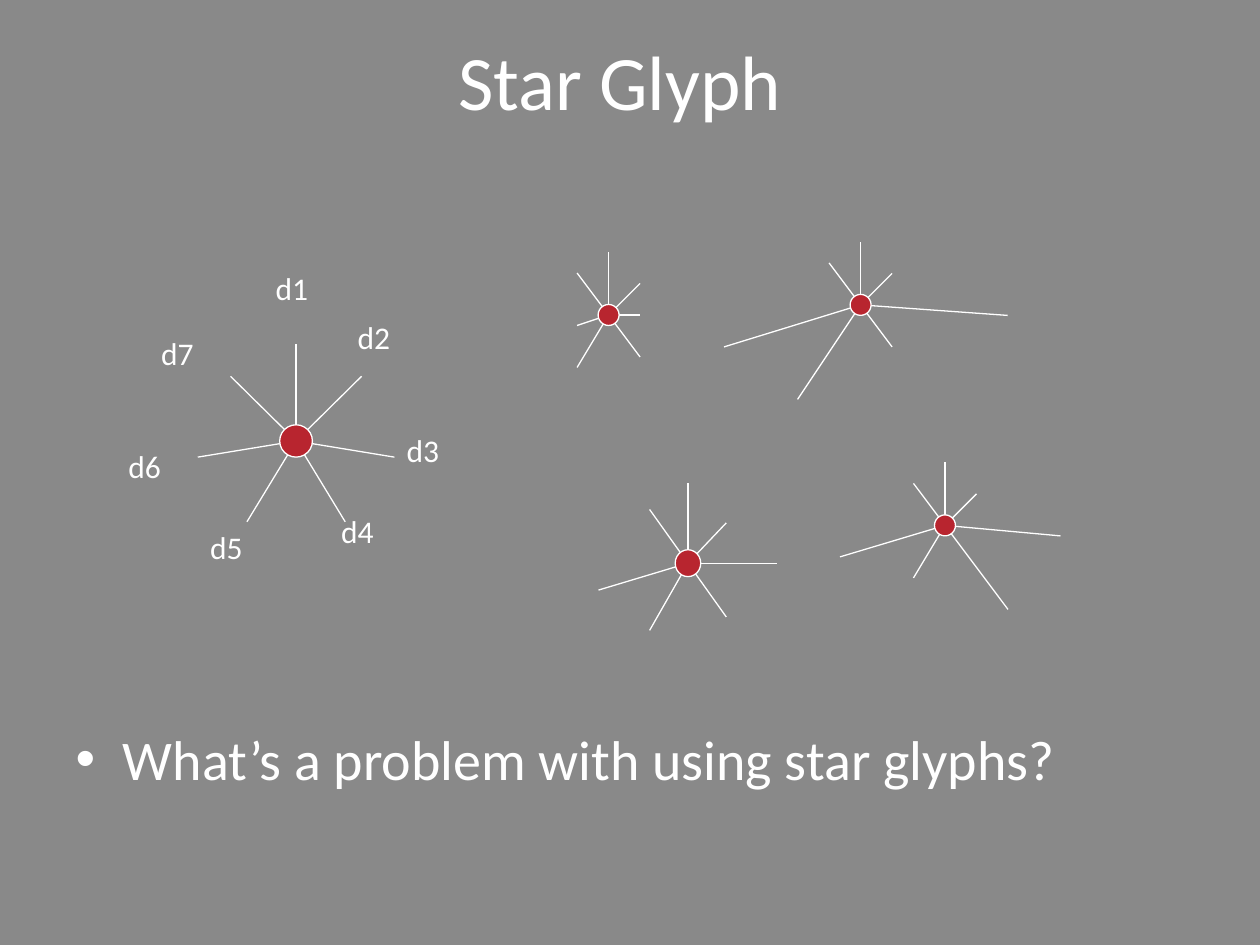
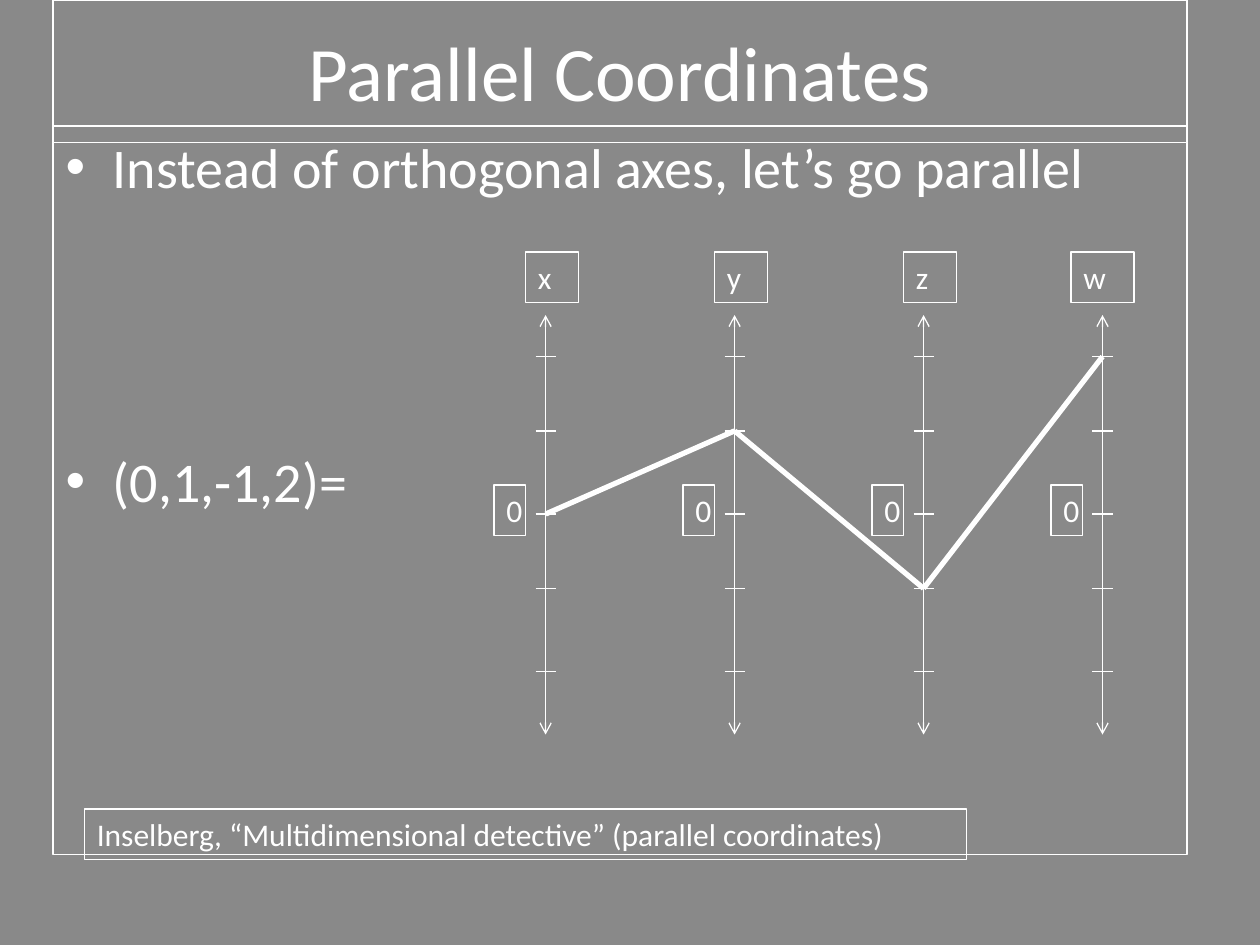
from itertools import pairwise

from lxml.etree import SubElement
from pptx import Presentation
from pptx.dml.color import RGBColor
from pptx.enum.shapes import MSO_CONNECTOR, MSO_SHAPE
from pptx.enum.text import MSO_ANCHOR, MSO_AUTO_SIZE, PP_ALIGN
from pptx.oxml.ns import qn
from pptx.util import Inches, Pt

THEME = {
    "background": RGBColor(0x89, 0x89, 0x89),
    "ink": RGBColor(0xFF, 0xFF, 0xFF),
    "hub": RGBColor(0xB8, 0x25, 0x2F),
    "font": "Calibri",
    "title": Pt(44),
    "body": Pt(32),
    "label": Pt(18),
    "thin": Pt(0.75),
    "thick": Pt(3),
}
TITLE_FRAME = {"vertical_anchor": MSO_ANCHOR.MIDDLE, "word_wrap": True,
               "auto_size": MSO_AUTO_SIZE.NONE}
BODY_FRAME = {"vertical_anchor": MSO_ANCHOR.TOP, "word_wrap": True,
              "auto_size": MSO_AUTO_SIZE.NONE}
BOX_FRAME = {"vertical_anchor": MSO_ANCHOR.TOP, "word_wrap": True,
             "auto_size": MSO_AUTO_SIZE.SHAPE_TO_FIT_TEXT}
LABEL_FRAME = BOX_FRAME | {"word_wrap": False}

GLYPH_SLIDE = {
    "title": "Star Glyph",
    "title_box": (0.42, 0.17, 9, 0.92),
    "body": [("What’s a problem with using star glyphs?", 0)],
    "body_box": (0.5, 5.7, 9.25, 1.05),
}
PARALLEL_SLIDE = {
    "title": "Parallel Coordinates",
    "title_box": (0.42, 0, 9, 1.13),
    "body": [("Instead of orthogonal axes, let’s go parallel", 0), ("(0,1,-1,2)=", 141)],
    "body_box": (0.42, 1, 9, 5.78),
}

SMALL_UNIT = (0.5 / 6, 0.5 / 6)
STARS = [
    {"center": (2.35, 3.5), "unit": (0.78 / 6, 0.77 / 6),
     "spokes": [(0, -6), (4, -4), (6, 1), (3, 5), (-3, 5), (-6, 1), (-4, -4)],
     "labels": {"d1": (-2, -11), "d2": (3, -8), "d3": (6, -1), "d4": (2, 4),
                "d5": (-6, 5), "d6": (-11, 0), "d7": (-9, -7)}},
    {"center": (7.5, 4.17), "unit": SMALL_UNIT,
     "spokes": [(0, -6), (3, -3), (11, 1), (6, 8), (-3, 5), (-10, 3), (-3, -4)]},
    {"center": (4.83, 2.5), "unit": SMALL_UNIT,
     "spokes": [(0, -6), (3, -3), (3, 0), (3, 4), (-3, 5), (-3, 1), (-3, -4)]},
    {"center": (6.83, 2.42), "unit": SMALL_UNIT,
     "spokes": [(0, -6), (3, -3), (14, 1), (3, 4), (-6, 9), (-13, 4), (-3, -4)]},
    {"center": (5.46, 4.47), "unit": (0.71 / 7, 0.64 / 6),
     "spokes": [(0, -6), (3, -3), (7, 0), (3, 4), (-3, 5), (-7, 2), (-3, -4)]},
]

AXES = [("x", 4.33, 0.42, 0), ("y", 5.83, 0.42, 1), ("z", 7.33, 0.42, -1), ("w", 8.75, 0.5, 2)]
TICKS = {2: 2.83, 1: 3.42, 0: 4.08, -1: 4.67, -2: 5.33}
AXIS_TOP, AXIS_BOTTOM, TICK_REACH = 2.5, 5.83, 0.08
CITATION = "Inselberg, “Multidimensional detective” (parallel coordinates)"
CITATION_BOX = (0.67, 6.42, 7, 0.4)


def apply_format(target, values):
    for name, value in values.items():
        setattr(target, name, value)


def place(shape, box):
    sides = ("left", "top", "width", "height")
    apply_format(shape, dict(zip(sides, map(Inches, box))))


def outline(shape, width=THEME["thin"]):
    shape.line.color.rgb = THEME["ink"]
    shape.line.width = width


def write(shape, entries, size, frame, alignment=PP_ALIGN.LEFT):
    text_frame = shape.text_frame
    apply_format(text_frame, frame)
    text_frame.text = "\n".join(text for text, _ in entries)
    for paragraph, (_, gap) in zip(text_frame.paragraphs, entries):
        apply_format(paragraph, {"alignment": alignment, "space_before": Pt(gap)})
        apply_format(paragraph.font, {"name": THEME["font"], "size": size})
        paragraph.font.color.rgb = THEME["ink"]


def add_line(shapes, start, end, width=THEME["thin"], arrows=False):
    line = shapes.add_connector(MSO_CONNECTOR.STRAIGHT, *map(Inches, (*start, *end)))
    outline(line, width)
    if arrows:
        for tag in ("a:headEnd", "a:tailEnd"):
            SubElement(line.line._get_or_add_ln(), qn(tag), type="arrow")
    SubElement(line._element.spPr, qn("a:effectLst"))


def add_box(shapes, text, box):
    shape = shapes.add_shape(MSO_SHAPE.RECTANGLE, *map(Inches, box))
    shape.shadow.inherit = False
    shape.fill.background()
    outline(shape)
    write(shape, [(text, 0)], THEME["label"], BOX_FRAME)


def add_slide(presentation, content):
    slide = presentation.slides.add_slide(presentation.slide_layouts[1])
    title, body = slide.placeholders
    place(title, content["title_box"])
    write(title, [(content["title"], 0)], THEME["title"], TITLE_FRAME, PP_ALIGN.CENTER)
    place(body, content["body_box"])
    write(body, content["body"], THEME["body"], BODY_FRAME)
    return slide


def add_star(slide, star):
    shapes = slide.shapes.add_group_shape().shapes
    (center_x, center_y), (unit_x, unit_y) = star["center"], star["unit"]

    def locate(across, down):
        return center_x + across * unit_x, center_y + down * unit_y

    for spoke in star["spokes"]:
        add_line(shapes, star["center"], locate(*spoke))
    hub_box = (*locate(-1, -1), 2 * unit_x, 2 * unit_y)
    hub = shapes.add_shape(MSO_SHAPE.FLOWCHART_CONNECTOR, *map(Inches, hub_box))
    hub.shadow.inherit = False
    hub.fill.solid()
    hub.fill.fore_color.rgb = THEME["hub"]
    outline(hub)
    for text, offset in star.get("labels", {}).items():
        label = shapes.add_textbox(*map(Inches, (*locate(*offset), 0.46, 0.4)))
        write(label, [(text, 0)], THEME["label"], LABEL_FRAME)


def add_axes(slide):
    shapes = slide.shapes.add_group_shape().shapes
    for name, x, width, _ in AXES:
        add_line(shapes, (x, AXIS_TOP), (x, AXIS_BOTTOM), arrows=True)
        for y in TICKS.values():
            add_line(shapes, (x - TICK_REACH, y), (x + TICK_REACH, y))
        add_box(shapes, "0", (x - 0.41, 3.85, 0.25, 0.4))
        name_left = x - (0.25 if name == "w" else 0.16)
        add_box(shapes, name, (name_left, 2, width, 0.4))
    points = [(x, TICKS[value]) for _, x, _, value in AXES]
    for start, end in pairwise(points):
        add_line(shapes, start, end, THEME["thick"])


def main():
    presentation = Presentation()
    apply_format(presentation, {"slide_width": Inches(10), "slide_height": Inches(7.5)})
    background = presentation.slide_master.background.fill
    background.solid()
    background.fore_color.rgb = THEME["background"]

    glyph_slide = add_slide(presentation, GLYPH_SLIDE)
    for star in STARS:
        add_star(glyph_slide, star)

    parallel_slide = add_slide(presentation, PARALLEL_SLIDE)
    for placeholder in parallel_slide.placeholders:
        outline(placeholder)
    add_axes(parallel_slide)
    add_box(parallel_slide.shapes, CITATION, CITATION_BOX)
    presentation.save("out.pptx")


if __name__ == "__main__":
    main()
